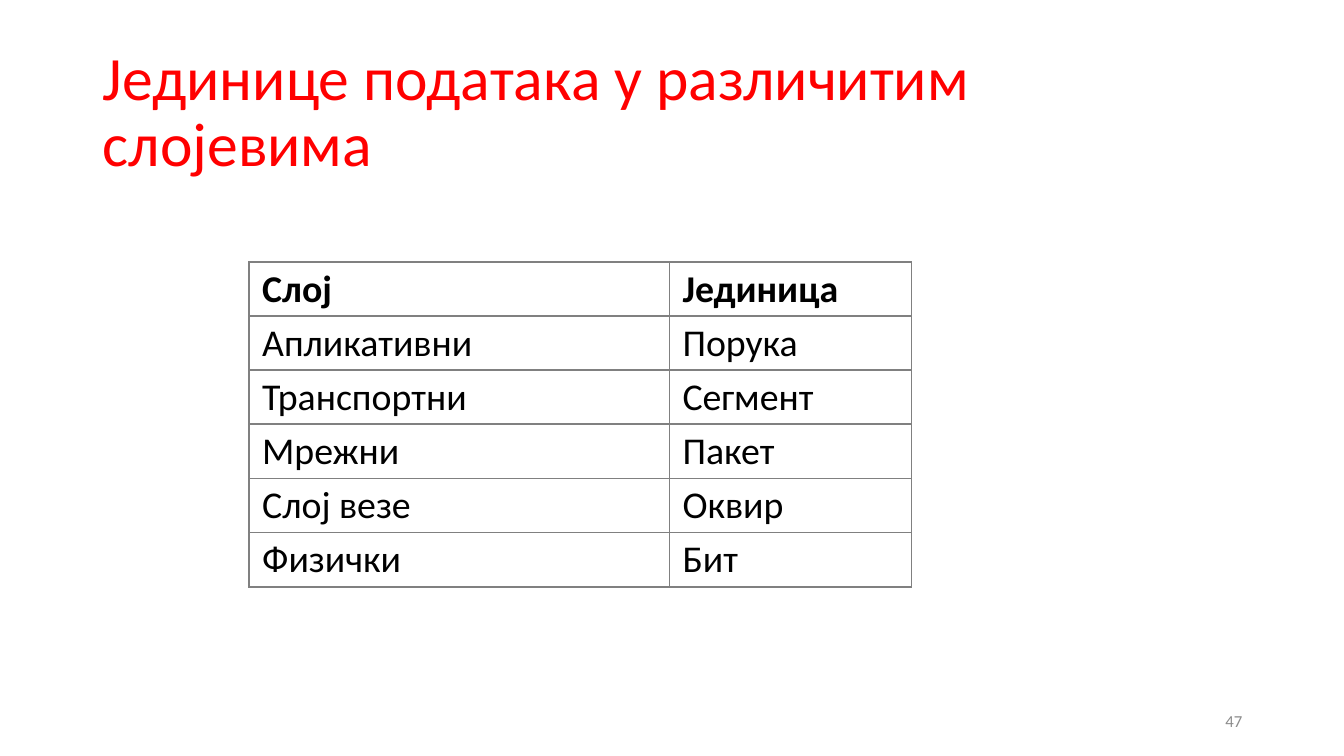
from dataclasses import dataclass

from lxml.etree import SubElement
from pptx import Presentation
from pptx.dml.color import RGBColor
from pptx.enum.text import MSO_ANCHOR, MSO_AUTO_SIZE, PP_ALIGN
from pptx.oxml.ns import qn
from pptx.util import Inches, Pt


@dataclass(frozen=True)
class Theme:
    font: str = "Calibri"
    title_color: str = "FF0000"
    text_color: str = "000000"
    number_color: str = "8C8C8C"
    border_color: str = "808080"
    title_size: float = 44
    table_size: float = 27
    number_size: float = 12
    border_width: float = 1.5


def write(tf, text, font, size, color, bold=False, align=PP_ALIGN.LEFT, spacing=None):
    p = tf.paragraphs[0]
    p.alignment = align
    if spacing:
        p.line_spacing = spacing
    r = p.add_run()
    r.text = text
    r.font.name = font
    r.font.size = Pt(size)
    r.font.bold = bold
    r.font.color.rgb = RGBColor.from_string(color)


class SlideBuilder:
    def __init__(self, prs, theme):
        self.theme = theme
        self.s = prs.slides.add_slide(prs.slide_layouts[5])

    def frame(self, tf):
        tf.word_wrap = True
        tf.auto_size = MSO_AUTO_SIZE.NONE
        tf.vertical_anchor = MSO_ANCHOR.MIDDLE
        return tf

    def title(self, text, left, top, width, height):
        sp = self.s.shapes.title
        sp.left, sp.top = Inches(left), Inches(top)
        sp.width, sp.height = Inches(width), Inches(height)
        write(self.frame(sp.text_frame), text, self.theme.font,
              self.theme.title_size, self.theme.title_color, spacing=0.9)

    def number(self, text, left, top, width, height):
        sp = self.s.shapes.add_textbox(
            Inches(left), Inches(top), Inches(width), Inches(height))
        write(self.frame(sp.text_frame), text, self.theme.font,
              self.theme.number_size, self.theme.number_color, align=PP_ALIGN.RIGHT)

    def borders(self, cell):
        tcPr = cell._tc.get_or_add_tcPr()
        for i, side in enumerate(("lnL", "lnR", "lnT", "lnB")):
            ln = SubElement(tcPr, qn(f"a:{side}"), w=str(Pt(self.theme.border_width)))
            fill = SubElement(ln, qn("a:solidFill"))
            SubElement(fill, qn("a:srgbClr"), val=self.theme.border_color)
            # Borders come before the cell fill
            tcPr.insert(i, ln)

    def table(self, rows, left, top, col_widths, row_height):
        table = self.s.shapes.add_table(
            len(rows), len(col_widths), Inches(left), Inches(top),
            Inches(sum(col_widths)), Inches(row_height * len(rows))).table
        table.horz_banding = False
        for col, width in zip(table.columns, col_widths):
            col.width = Inches(width)
        for i, values in enumerate(rows):
            table.rows[i].height = Inches(row_height)
            for j, value in enumerate(values):
                cell = table.cell(i, j)
                cell.fill.background()
                cell.margin_left, cell.margin_right = Inches(0.13), Inches(0.07)
                cell.margin_top = cell.margin_bottom = Inches(0.04)
                write(cell.text_frame, value, self.theme.font,
                      self.theme.table_size, self.theme.text_color, bold=i == 0)
                self.borders(cell)


def main():
    prs = Presentation()
    prs.slide_width, prs.slide_height = Inches(13.33), Inches(7.5)
    slide = SlideBuilder(prs, Theme())

    # Slide number and title
    slide.number("47", 9.42, 6.95, 3, 0.4)
    slide.title("Јединице података у различитим слојевима", 0.92, 0.4, 11.5, 1.45)

    # Data unit of each network layer
    slide.table([
        ("Слој", "Јединица"),
        ("Апликативни", "Порука"),
        ("Транспортни", "Сегмент"),
        ("Мрежни", "Пакет"),
        ("Слој везе", "Оквир"),
        ("Физички", "Бит"),
    ], 2.47, 2.6, (4.17, 2.4), 0.53)

    prs.save("out.pptx")


if __name__ == "__main__":
    main()
